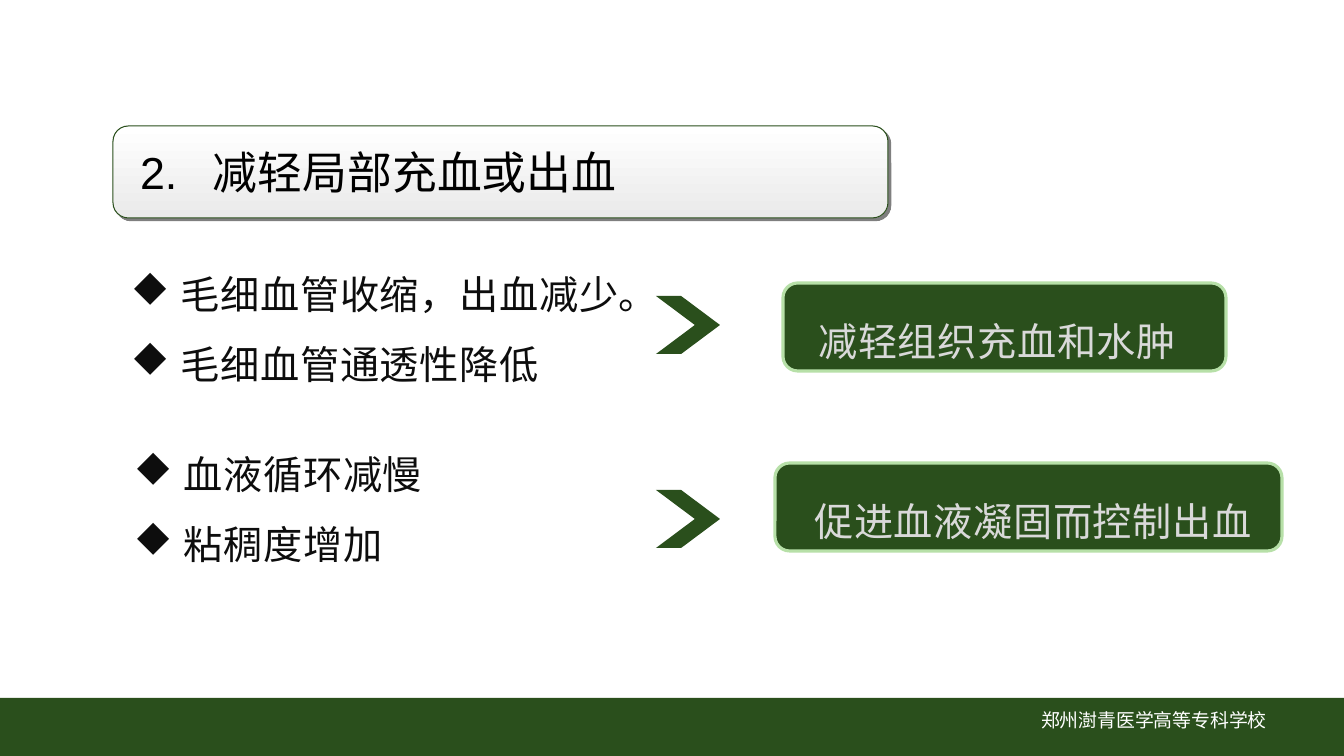
import pptx
import pptx.util
import pptx.dml.color
import pptx.enum.shapes
import pptx.enum.text
import pptx.oxml
import pptx.oxml.ns
from lxml import etree

HEADING = "2.\t减轻局部充血或出血"
SCHOOL = "郑州澍青医学高等专科学校"
CAUSES = [
    ((121, 254, 550, 132), ["毛细血管收缩，出血减少。", "毛细血管通透性降低"]),
    ((124, 434, 435, 132), ["血液循环减慢", "粘稠度增加"]),
]
EFFECTS = [
    ((783, 283, 443, 88), 31, "减轻组织充血和水肿"),
    ((775, 463, 507, 88), 35, "促进血液凝固而控制出血"),
]
ARROW_TOPS = [296, 490]
COLORS = {
    "green": "2A4F1C", "pale_green": "B7E0A8", "white": "FFFFFF",
    "silver": "EAEAEA", "black": "000000", "ink": "0D0D0D", "light": "D9D9D9",
}
CJK = "Noto Sans CJK SC"
PX = 914400 / 100.8
SHAPE = pptx.enum.shapes.MSO_SHAPE
ALIGN = pptx.enum.text.PP_ALIGN
ANCHOR = pptx.enum.text.MSO_ANCHOR


def px(length):
    return round(length * PX)


def color(name):
    return pptx.dml.color.RGBColor.from_string(COLORS[name])


def sub(parent, tag, **attributes):
    return etree.SubElement(parent, pptx.oxml.ns.qn(tag), attributes)


def add_block(kind, box, fill=None):
    block = slide.shapes.add_shape(kind, *map(px, box))
    block.shadow.inherit = False
    block.line.fill.background()
    if fill:
        block.fill.solid()
        block.fill.fore_color.rgb = color(fill)
    return block


def set_font(paragraph, size, tint, latin=CJK, spacing=0):
    paragraph.font.size = pptx.util.Pt(size)
    paragraph.font.color.rgb = color(tint)
    paragraph.font.name = latin
    defaults = paragraph._p.pPr.find(pptx.oxml.ns.qn("a:defRPr"))
    sub(defaults, "a:ea", typeface=CJK)
    if spacing:
        defaults.set("spc", str(spacing))


def set_body(paragraph, text, tint):
    paragraph.text = text
    paragraph.alignment = ALIGN.LEFT
    paragraph.line_spacing = 1.25
    paragraph.space_after = pptx.util.Pt(8)
    set_font(paragraph, 28, tint, spacing=50)


def add_bullet(paragraph):
    properties = paragraph._p.get_or_add_pPr()
    properties.set("marL", str(px(50)))
    properties.set("indent", str(-px(50)))
    sub(properties, "a:buFont", typeface="Wingdings")
    sub(properties, "a:buChar", char="u")


def set_insets(frame, left=0, top=0, right=0, bottom=0):
    frame.margin_left, frame.margin_top = px(left), px(top)
    frame.margin_right, frame.margin_bottom = px(right), px(bottom)


deck = pptx.Presentation()
deck.slide_width, deck.slide_height = px(1344), px(756)
slide = deck.slides.add_slide(deck.slide_layouts[5])

add_block(SHAPE.RECTANGLE, (0, 698, 1344, 58), "green")
school = slide.shapes.add_textbox(*map(px, (963, 704, 382, 46))).text_frame
school.word_wrap = True
school.text = SCHOOL
school.paragraphs[0].alignment = ALIGN.CENTER
set_font(school.paragraphs[0], 13.5, "white")

panel = add_block(SHAPE.ROUNDED_RECTANGLE, (113, 126, 775, 92))
panel.fill.gradient()
panel.fill.gradient_angle = 270
for stop, tint in zip(panel.fill.gradient_stops, ("white", "silver")):
    stop.color.rgb = color(tint)
panel.line.color.rgb = color("green")
panel.line.width = pptx.util.Pt(0.75)
effects = panel._element.spPr.find(pptx.oxml.ns.qn("a:effectLst"))
shadow = sub(effects, "a:outerShdw", dist=str(pptx.util.Pt(2.8)), dir="2700000",
             algn="ctr", rotWithShape="0")
sub(sub(shadow, "a:srgbClr", val=COLORS["black"]), "a:alpha", val="50000")

title = slide.shapes.title
title.left, title.top, title.width, title.height = map(px, (140, 126, 740, 92))
heading = title.text_frame
heading.text = HEADING
heading.word_wrap = True
heading.auto_size = pptx.enum.text.MSO_AUTO_SIZE.NONE
heading.vertical_anchor = ANCHOR.MIDDLE
set_insets(heading)
heading_line = heading.paragraphs[0]
heading_line.alignment = ALIGN.LEFT
tabs = sub(heading_line._p.get_or_add_pPr(), "a:tabLst")
sub(tabs, "a:tab", pos=str(px(73)), algn="l")
set_font(heading_line, 32, "black", latin="Arial")
slide.shapes._spTree.append(title._element)

for box, causes in CAUSES:
    frame = slide.shapes.add_textbox(*map(px, box)).text_frame
    frame.word_wrap = True
    for index, cause in enumerate(causes):
        line = frame.add_paragraph() if index else frame.paragraphs[0]
        add_bullet(line)
        set_body(line, cause, "ink")

for box, inset, effect in EFFECTS:
    pill = add_block(SHAPE.ROUNDED_RECTANGLE, box, "green")
    pill.line.color.rgb = color("pale_green")
    pill.line.width = pptx.util.Pt(2.25)
    frame = pill.text_frame
    frame.word_wrap = True
    frame.vertical_anchor = ANCHOR.TOP
    set_insets(frame, left=inset, top=18)
    set_body(frame.paragraphs[0], effect, "light")

for top in ARROW_TOPS:
    arrow = add_block(SHAPE.CHEVRON, (656, top, 64, 58), "green")
    arrow.adjustments[0] = 0.67

deck.save("out.pptx")
